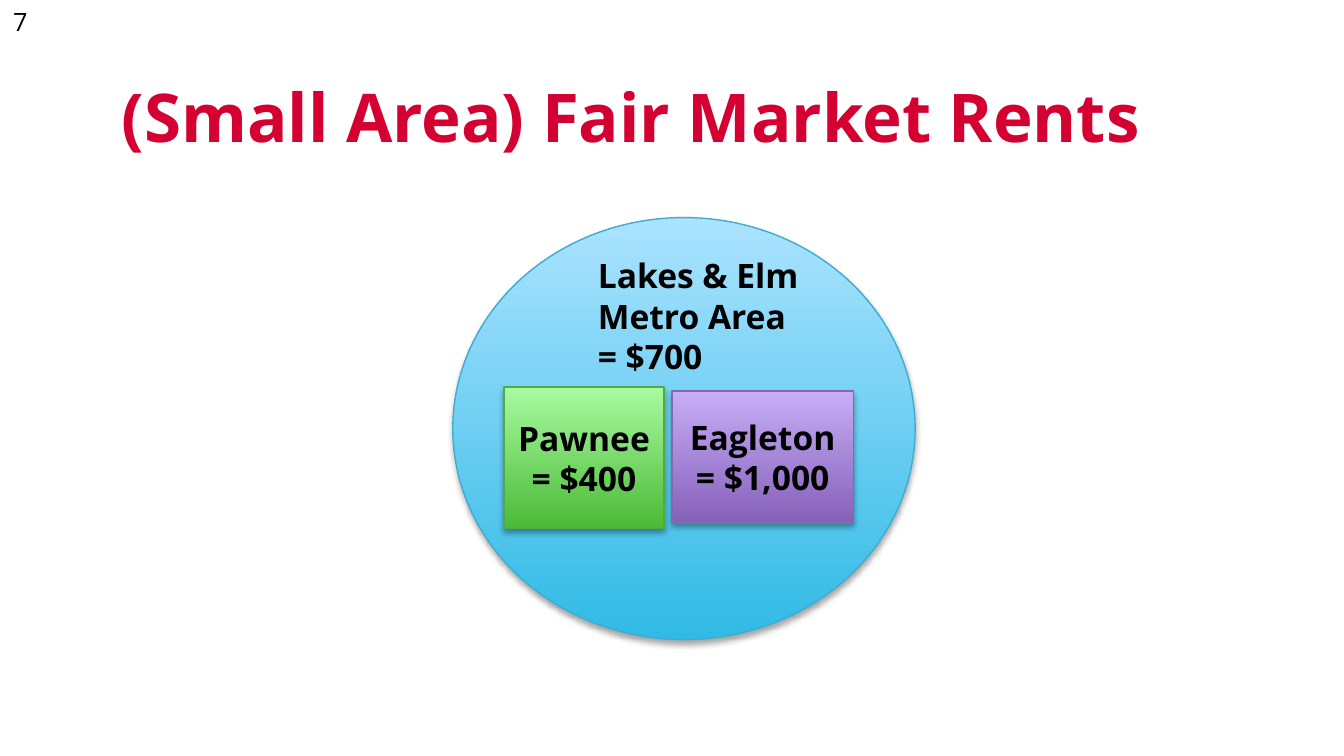
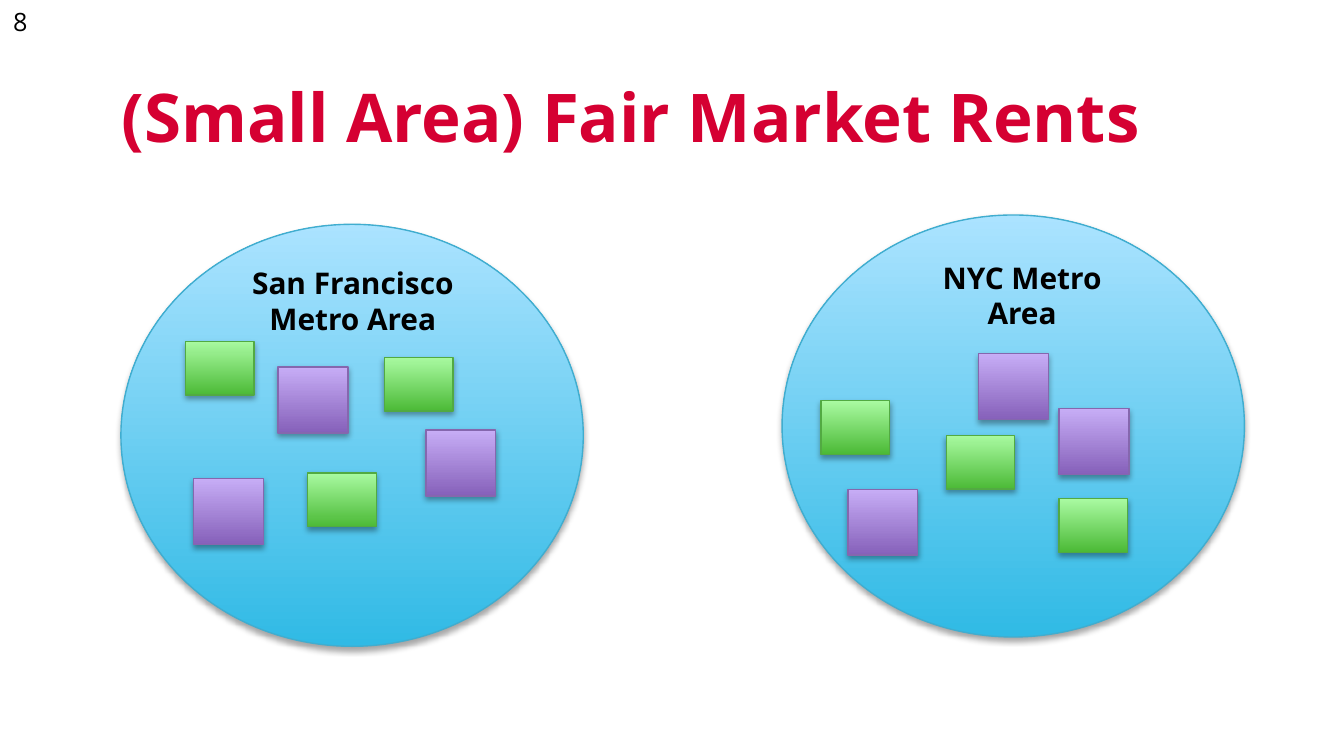
import pptx
import pptx.dml.color
import pptx.enum.shapes
import pptx.enum.text
import pptx.oxml
import pptx.oxml.ns
import pptx.util

Pt = pptx.util.Pt
ALIGN = pptx.enum.text.PP_ALIGN
ANCHOR = pptx.enum.text.MSO_ANCHOR
SHAPE = pptx.enum.shapes.MSO_SHAPE

FONT = "Open Sans"
BLACK = "000000"
TITLE_RED = "D50032"
TITLE = "(Small Area) Fair Market Rents"

# Bottom colour, top colour, outline
BLUE = ("30BAE5", "ABE3FF", "40ADCF")
GREEN = ("4CBA37", "A9FAA1", "52AA42")
PURPLE = ("8661BA", "C7ADF6", "8567AE")

METRO_SIZE = (247.7, 226.1)
TILE_SIZES = {GREEN: (36.7, 28.8), PURPLE: (37.4, 35.3)}

SHADOW_XML = (
    f'<a:outerShdw {pptx.oxml.ns.nsdecls("a")} blurRad="{Pt(3.1)}" '
    f'dist="{Pt(1.8)}" dir="5400000" rotWithShape="0">'
    '<a:srgbClr val="000000"><a:alpha val="35000"/></a:srgbClr></a:outerShdw>'
)


def rgb(value):
    return pptx.dml.color.RGBColor.from_string(value)


def write_text(shape, text, size=18, color=BLACK, bold=True,
               align=ALIGN.CENTER, anchor=ANCHOR.TOP):
    """Fill a shape with text, one paragraph per line."""
    frame = shape.text_frame
    frame.word_wrap = True
    frame.vertical_anchor = anchor
    for index, line in enumerate(text.split("\n")):
        para = frame.add_paragraph() if index else frame.paragraphs[0]
        para.alignment = align
        span = para.add_run()
        span.text = line
        span.font.name = FONT
        span.font.size = Pt(size)
        span.font.bold = bold
        span.font.color.rgb = rgb(color)


def add_text(page, area, text, grow=False, **style):
    box = page.shapes.add_textbox(*map(Pt, area))
    write_text(box, text, **style)
    if grow:
        box.text_frame.auto_size = pptx.enum.text.MSO_AUTO_SIZE.SHAPE_TO_FIT_TEXT


def add_glossy(page, kind, area, palette):
    """Add a shape with a vertical gradient, thin outline and soft shadow."""
    shape = page.shapes.add_shape(kind, *map(Pt, area))
    bottom, top, outline = palette
    shape.fill.gradient()
    shape.fill.gradient_angle = 90
    for stop, color in zip(shape.fill.gradient_stops, (bottom, top)):
        stop.color.rgb = rgb(color)
    shape.line.color.rgb = rgb(outline)
    shape.line.width = Pt(0.75)
    shape.shadow.inherit = False
    effects = shape.element.spPr.find(pptx.oxml.ns.qn("a:effectLst"))
    effects.append(pptx.oxml.parse_xml(SHADOW_XML))
    return shape


def add_metro(page, left, top):
    add_glossy(page, SHAPE.OVAL, (left, top, *METRO_SIZE), BLUE)


def add_town(page, area, palette, text):
    town = add_glossy(page, SHAPE.RECTANGLE, area, palette)
    write_text(town, text, anchor=ANCHOR.MIDDLE)


def add_tiled_metro(page, corner, label_area, label, tiles):
    """Add a metro area holding unlabelled small areas, grouped by palette."""
    add_metro(page, *corner)
    for palette, corners in tiles.items():
        for tile_corner in corners:
            add_glossy(page, SHAPE.RECTANGLE,
                       (*tile_corner, *TILE_SIZES[palette]), palette)
    add_text(page, label_area, label, grow=True, size=16)


def add_page(deck, number):
    page = deck.slides.add_slide(deck.slide_layouts[6])
    add_text(page, (0, 0, 36, 21.6), str(number), size=13.5, bold=False,
             align=ALIGN.LEFT)
    add_text(page, (46.8, 28.1, 582.5, 67.7), TITLE, size=36,
             color=TITLE_RED, anchor=ANCHOR.MIDDLE)
    return page


def build_example(deck):
    page = add_page(deck, 7)
    add_metro(page, 242.6, 116.6)
    add_town(page, (270, 207.4, 85.7, 75.6), GREEN, "Pawnee\n= $400")
    add_town(page, (360, 209.5, 97.2, 70.6), PURPLE, "Eagleton = $1,000")
    add_text(page, (313.2, 133.2, 121.7, 72.7),
             "Lakes & Elm Metro Area\n= $700", grow=True, align=ALIGN.LEFT)


def build_comparison(deck):
    page = add_page(deck, 8)
    add_tiled_metro(
        page, (419, 115.2), (486.7, 135.4, 121.7, 46.1), "NYC Metro Area",
        {GREEN: [(567.4, 267.1), (506.9, 233.3), (439.9, 214.6)],
         PURPLE: [(524.2, 189.4), (567.4, 218.9), (454.3, 262.1)]})
    add_tiled_metro(
        page, (64.8, 120.2), (124.6, 138.2, 128.9, 46.1),
        "San Francisco Metro Area",
        {GREEN: [(99.4, 182.9), (205.9, 191.5), (164.9, 253.4)],
         PURPLE: [(149, 196.6), (228.2, 230.4), (103.7, 256.3)]})


def main():
    deck = pptx.Presentation()
    deck.slide_width = Pt(720)
    deck.slide_height = Pt(405)
    build_example(deck)
    build_comparison(deck)
    deck.save("out.pptx")


if __name__ == "__main__":
    main()
